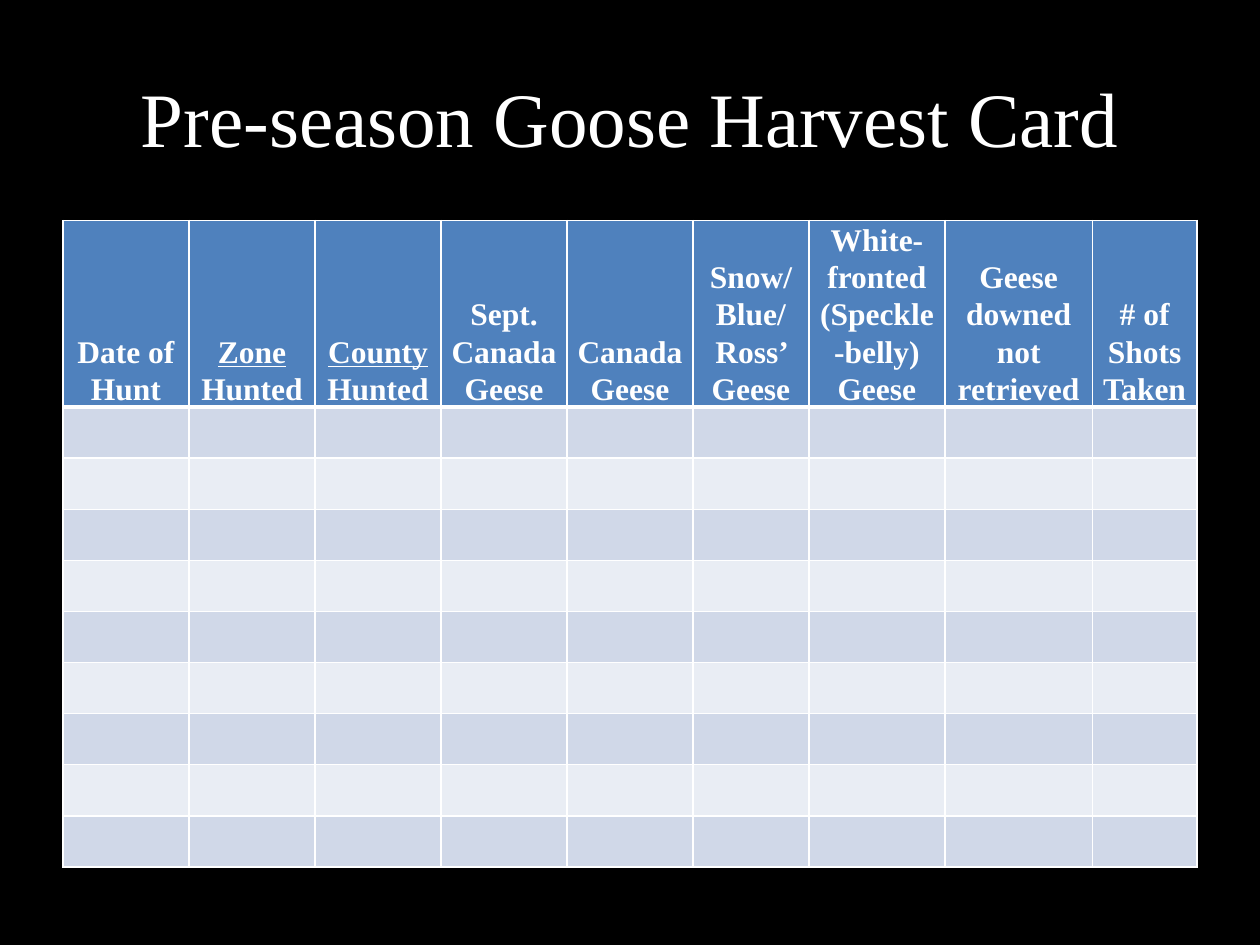
"""Build the goose harvest card slide: a title above a blank log table."""
from dataclasses import dataclass

from lxml import etree
from pptx import Presentation
from pptx import util as u
from pptx.dml.color import RGBColor
from pptx.enum import text
from pptx.oxml.ns import qn


@dataclass(frozen=True)
class Theme:
    font: str = "Times New Roman"
    background: str = "000000"
    ink: str = "FFFFFF"
    header: str = "4F81BD"
    bands: tuple = ("D0D8E8", "E9EDF4")
    title_size: int = 44
    header_size: int = 18
    line: int = 1
    header_line: int = 3


theme = Theme()


def add_span(para, words, size, bold=False, underline=False):
    span = para.add_run()
    span.text = words
    span.font.name = theme.font
    span.font.size = u.Pt(size)
    span.font.bold = bold
    span.font.underline = underline
    span.font.color.rgb = RGBColor.from_string(theme.ink)


def style_cell(cell, fill, top, bottom):
    properties = cell._tc.get_or_add_tcPr()
    widths = {"a:lnL": theme.line, "a:lnR": theme.line, "a:lnT": top, "a:lnB": bottom}
    for side, width in widths.items():
        line = etree.SubElement(properties, qn(side), w=str(u.Pt(width)))
        solid = etree.SubElement(line, qn("a:solidFill"))
        etree.SubElement(solid, qn("a:srgbClr"), val=theme.ink)
    cell.fill.solid()
    cell.fill.fore_color.rgb = RGBColor.from_string(fill)


deck = Presentation()
deck.slide_width, deck.slide_height = u.Inches(10), u.Inches(7.5)
page = deck.slides.add_slide(deck.slide_layouts[5])
page.background.fill.solid()
page.background.fill.fore_color.rgb = RGBColor.from_string(theme.background)

title = page.shapes.title
title.left, title.top = u.Inches(0.5), u.Inches(0.3)
title.width, title.height = u.Inches(9), u.Inches(1.25)
title.text_frame.vertical_anchor = text.MSO_ANCHOR.MIDDLE
title_para = title.text_frame.paragraphs[0]
title_para.alignment = text.PP_ALIGN.CENTER
add_span(title_para, "Pre-season Goose Harvest Card", theme.title_size)

columns = [
    (1, "", ["Date of Hunt"]),
    (1, "Zone", [" Hunted"]),
    (1, "County", [" Hunted"]),
    (1, "", ["Sept. Canada Geese"]),
    (1, "", ["Canada", "Geese"]),
    (0.92, "", ["Snow/", "Blue/", "Ross’ Geese"]),
    (1.08, "", ["White-fronted (Speckle-belly) Geese"]),
    (1.17, "", ["Geese downed", "not retrieved"]),
    (0.83, "", ["# of Shots Taken"]),
]
hunt_rows = 9
header_height = 1.48
hunt_height = 3.65 / hunt_rows

card = page.shapes.add_table(
    hunt_rows + 1, len(columns), u.Inches(0.5), u.Inches(1.75),
    u.Inches(9), u.Inches(header_height + hunt_rows * hunt_height),
).table
card.rows[0].height = u.Inches(header_height)

for index, (width, underlined, lines) in enumerate(columns):
    card.columns[index].width = u.Inches(width)
    cell = card.cell(0, index)
    style_cell(cell, theme.header, theme.line, theme.header_line)
    cell.vertical_anchor = text.MSO_ANCHOR.BOTTOM
    cell.margin_left = cell.margin_right = u.Inches(0.07)
    cell.margin_top = cell.margin_bottom = 0
    frame = cell.text_frame
    for number, words in enumerate(lines):
        para = frame.add_paragraph() if number else frame.paragraphs[0]
        para.alignment = text.PP_ALIGN.CENTER
        para.line_spacing = 1.07
        if underlined:
            add_span(para, underlined, theme.header_size, bold=True, underline=True)
        add_span(para, words, theme.header_size, bold=True)

for row in range(1, hunt_rows + 1):
    card.rows[row].height = u.Inches(hunt_height)
    top = theme.header_line if row == 1 else theme.line
    for index in range(len(columns)):
        style_cell(card.cell(row, index), theme.bands[(row - 1) % 2], top, theme.line)

deck.save("out.pptx")
